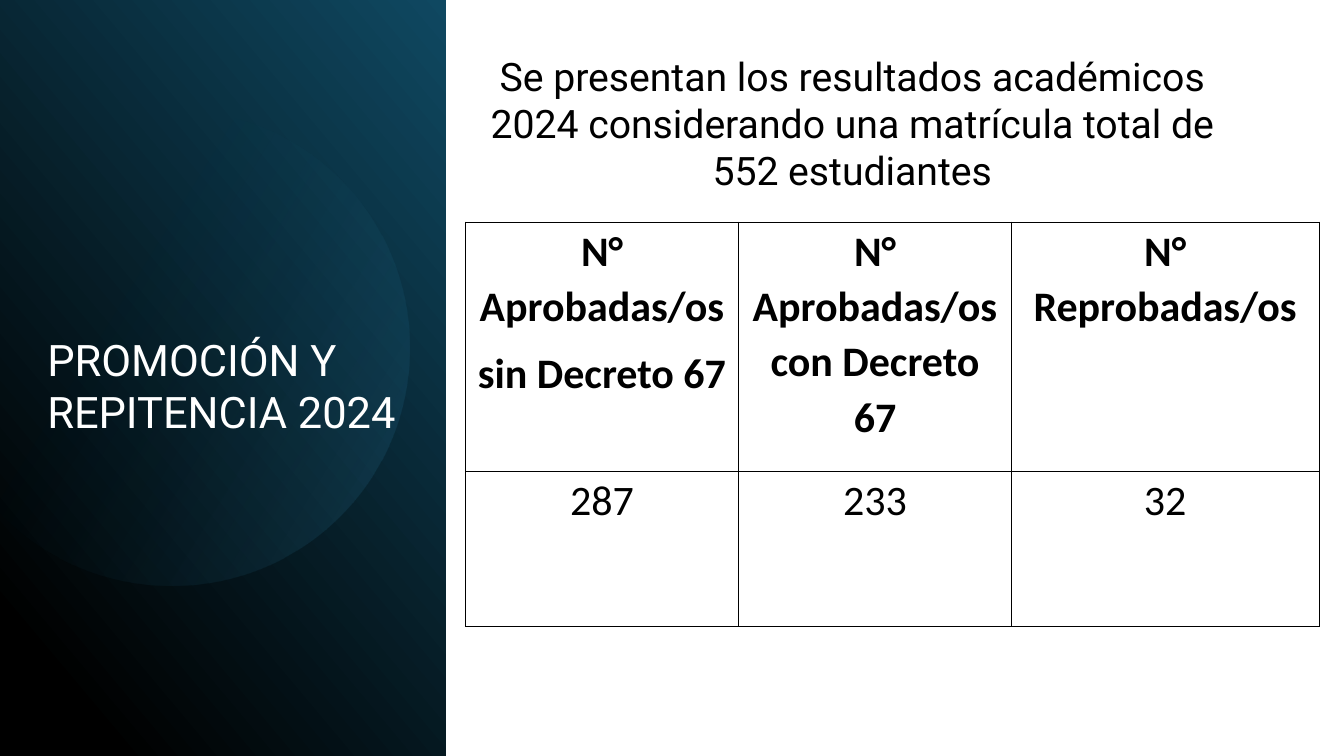
from lxml.etree import SubElement
from pptx import Presentation
from pptx.dml.color import RGBColor
from pptx.enum.shapes import MSO_SHAPE
from pptx.enum.text import MSO_ANCHOR, MSO_AUTO_SIZE, PP_ALIGN
from pptx.oxml.ns import qn
from pptx.util import Pt

WIDE, HIGH = 960, 540
COLORS = {"black": "000000", "white": "FFFFFF", "navy": "0F4861",
          "teal": "156082", "sky": "43AFE2"}
HEADS = [["N° Aprobadas/os", "sin Decreto 67"],
         ["N° Aprobadas/os con Decreto 67"],
         ["N° Reprobadas/os"]]
COUNTS = [["287"], ["233"], ["32"]]
COLS = [195, 195, 219.5]
ROWS = [177.8, 111.2]

FRAME = {"word_wrap": True, "auto_size": MSO_AUTO_SIZE.NONE,
         "vertical_anchor": MSO_ANCHOR.TOP,
         "margin_left": Pt(7.2), "margin_right": Pt(7.2),
         "margin_top": Pt(7.2), "margin_bottom": Pt(7.2)}
CELL = {"margin_left": Pt(5), "margin_right": Pt(5),
        "margin_top": 0, "margin_bottom": 0}
LEFT = {"alignment": PP_ALIGN.LEFT, "space_before": 0}
CENTER = {"alignment": PP_ALIGN.CENTER, "space_before": 0}
ENTRY = {"alignment": PP_ALIGN.CENTER, "line_spacing": 1.08,
         "space_after": Pt(8)}


def color(name):
    return RGBColor.from_string(COLORS[name])


def apply(target, values):
    for name, value in values.items():
        setattr(target, name, value)


def write(para, text, face, size, tone, form, bold=False):
    apply(para, form)
    run = para.add_run()
    run.text = text
    apply(run.font, {"name": face, "size": Pt(size), "bold": bold})
    run.font.color.rgb = color(tone)


def place(shape, box, text, size, tone, form):
    """Move a placeholder and give it one unbulleted paragraph."""
    apply(shape, dict(zip(("left", "top", "width", "height"), map(Pt, box))))
    apply(shape.text_frame, FRAME)
    para = shape.text_frame.paragraphs[0]
    write(para, text, "Roboto", size, tone, form)
    props = para._p.get_or_add_pPr()
    props.set("marL", "0")
    props.set("indent", "0")
    SubElement(props, qn("a:buNone"))


def shade(slide, kind, box, angle, stops):
    """Add a borderless shape; stops are (position, colour, opacity) in percent."""
    shape = slide.shapes.add_shape(kind, *map(Pt, box))
    shape.shadow.inherit = False
    shape.line.fill.background()
    shape.fill.gradient()
    shape.fill.gradient_angle = angle
    group = shape.fill._fill._gradFill.find(qn("a:gsLst"))
    for stop in list(group):
        group.remove(stop)
    for pos, tone, alpha in stops:
        stop = SubElement(group, qn("a:gs"), pos=str(pos * 1000))
        tint = SubElement(stop, qn("a:srgbClr"), val=COLORS[tone])
        if alpha < 100:
            SubElement(tint, qn("a:alpha"), val=str(alpha * 1000))


def edge(cell):
    props = cell._tc.get_or_add_tcPr()
    for side in ("lnL", "lnR", "lnT", "lnB"):
        line = SubElement(props, qn(f"a:{side}"), w=str(Pt(0.5)))
        fill = SubElement(line, qn("a:solidFill"))
        SubElement(fill, qn("a:srgbClr"), val=COLORS["black"])


def fill_cell(cell, lines, bold):
    apply(cell, CELL)
    edge(cell)
    cell.fill.background()
    frame = cell.text_frame
    for i, text in enumerate(lines):
        para = frame.add_paragraph() if i else frame.paragraphs[0]
        write(para, text, "Calibri", 30, "black", ENTRY, bold)
        if i:
            para.space_before = Pt(8)
        elif len(lines) > 1:
            para.space_after = 0


def add_grid(slide, left, top):
    grid = slide.shapes.add_table(len(ROWS), len(COLS), Pt(left), Pt(top),
                                  Pt(sum(COLS)), Pt(sum(ROWS))).table
    for col, width in zip(grid.columns, COLS):
        col.width = Pt(width)
    for r, texts in enumerate((HEADS, COUNTS)):
        grid.rows[r].height = Pt(ROWS[r])
        for c, lines in enumerate(texts):
            fill_cell(grid.cell(r, c), lines, bold=r == 0)


def main():
    deck = Presentation()
    apply(deck, {"slide_width": Pt(WIDE), "slide_height": Pt(HIGH)})
    slide = deck.slides.add_slide(deck.slide_layouts[1])
    title, body = slide.placeholders
    shade(slide, MSO_SHAPE.RECTANGLE, (0, 0, 318.5, HIGH), 40,
          [(0, "black", 100), (11, "black", 100), (100, "navy", 100)])
    shade(slide, MSO_SHAPE.OVAL, (-47.5, 78.5, 340, 340), 328.4,
          [(0, "teal", 0), (39, "teal", 0), (100, "sky", 15)])
    add_grid(slide, 332.6, 158.6)
    place(title, (26.6, 231, 265, 143.3), "PROMOCIÓN Y REPITENCIA 2024",
          31, "white", LEFT)
    place(body, (342.7, 30.2, 532, 126.7),
          "Se presentan los resultados académicos 2024 considerando "
          "una matrícula total de 552 estudiantes", 28, "black", CENTER)
    for shape in (title, body):
        slide.shapes._spTree.append(shape._element)
    deck.save("out.pptx")


if __name__ == "__main__":
    main()
